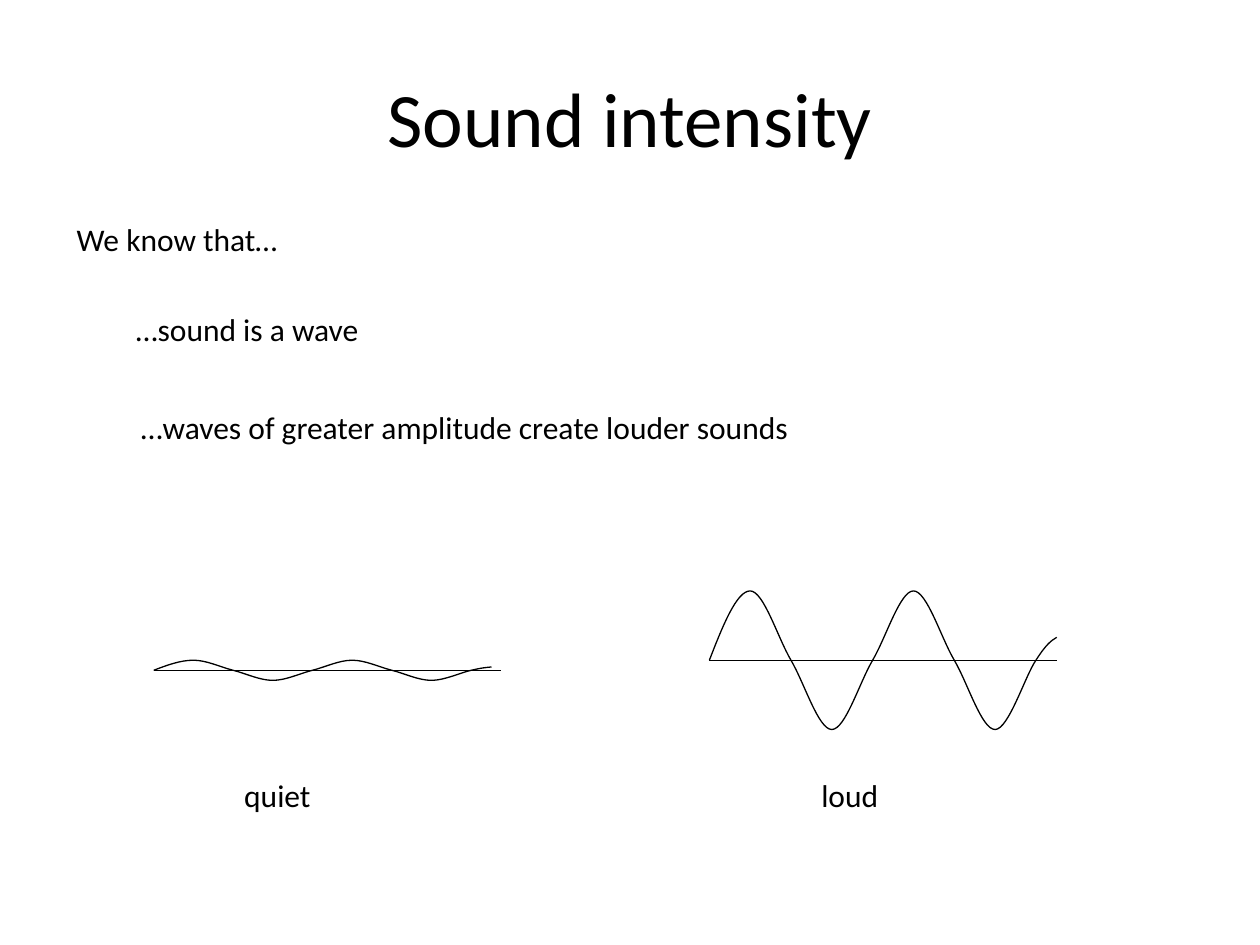
"""Build a slide on sound intensity with a quiet and a loud wave."""
from dataclasses import dataclass

from lxml.etree import SubElement
from pptx import Presentation
from pptx.dml.color import RGBColor
from pptx.enum.shapes import MSO_CONNECTOR
from pptx.enum.text import MSO_ANCHOR, PP_ALIGN
from pptx.oxml.ns import qn
from pptx.util import Inches, Pt


@dataclass(frozen=True)
class Theme:
    font: str = "Calibri"
    ink: RGBColor = RGBColor(0, 0, 0)
    title_size: Pt = Pt(44)
    body_size: Pt = Pt(18)
    line_width: Pt = Pt(0.75)


theme = Theme()


def add_text(slide, text, left, top, width, height, size):
    box = slide.shapes.add_textbox(Inches(left), Inches(top), Inches(width), Inches(height))
    box.text_frame.word_wrap = True
    paragraph = box.text_frame.paragraphs[0]
    run = paragraph.add_run()
    run.text = text
    run.font.name = theme.font
    run.font.size = size
    run.font.color.rgb = theme.ink
    return box.text_frame


def add_wave(slide, curves, left, middle, quarter, amplitude):
    scaled = [
        [(Inches(left + x * quarter), Inches(middle - y * amplitude)) for x, y in curve]
        for curve in curves
    ]
    builder = slide.shapes.build_freeform(Inches(left), Inches(middle))
    builder.add_line_segments([curve[-1] for curve in scaled], close=False)
    wave = builder.convert_to_shape()
    for segment, curve in zip(list(wave.element.iter(qn("a:lnTo"))), scaled):
        segment.tag = qn("a:cubicBezTo")
        for point in list(segment):
            segment.remove(point)
        for x, y in curve:
            SubElement(segment, qn("a:pt"), x=str(x - wave.left), y=str(y - wave.top))
    wave.shadow.inherit = False
    wave.fill.background()
    return wave


presentation = Presentation()
presentation.slide_width = Inches(10)
presentation.slide_height = Inches(7.5)
slide = presentation.slides.add_slide(presentation.slide_layouts[6])

title = add_text(slide, "Sound intensity", 0.5, 0.3, 9, 1.25, theme.title_size)
title.vertical_anchor = MSO_ANCHOR.MIDDLE
title.paragraphs[0].alignment = PP_ALIGN.CENTER

for text, left, top, width in (
    ("We know that…", 0.51, 1.7, 8.58),
    ("…waves of greater amplitude create louder sounds", 1.02, 3.19, 7.01),
    ("…sound is a wave", 0.98, 2.41, 5.35),
):
    add_text(slide, text, left, top, width, 0.4, theme.body_size)

curves = []
for peak, sign in ((1, 1), (3, -1), (5, 1), (7, -1)):
    rise = 0.5 if peak == 1 else 0.33
    fall_x, fall_y = (0.74, 0.22) if peak == 7 else (0.67, 0.33)
    curves += [
        [(peak - 0.67, sign * rise), (peak - 0.33, sign), (peak, sign)],
        [(peak + 0.33, sign), (peak + fall_x, sign * fall_y), (peak + 1, 0)],
    ]
curves.append([(8.25, 0.23), (8.37, 0.28), (8.51, 0.33)])

axis_length = 2.76
for left, middle, quarter, amplitude in ((1.22, 5.32, 0.315, 0.08), (5.63, 5.24, 0.324, 0.55)):
    axis = slide.shapes.add_connector(
        MSO_CONNECTOR.STRAIGHT,
        Inches(left), Inches(middle), Inches(left + axis_length), Inches(middle),
    )
    SubElement(axis.element.spPr, qn("a:effectLst"))
    wave = add_wave(slide, curves, left, middle, quarter, amplitude)
    for shape in (axis, wave):
        shape.line.color.rgb = theme.ink
        shape.line.width = theme.line_width

labels = add_text(slide, "\tquiet\tloud", 1.22, 6.11, 8.5, 0.4, theme.body_size)
tab_list = SubElement(labels.paragraphs[0]._p.get_or_add_pPr(), qn("a:tabLst"))
for position in (0.62, 5.2):
    SubElement(tab_list, qn("a:tab"), pos=str(Inches(position)), algn="l")

presentation.save("out.pptx")
